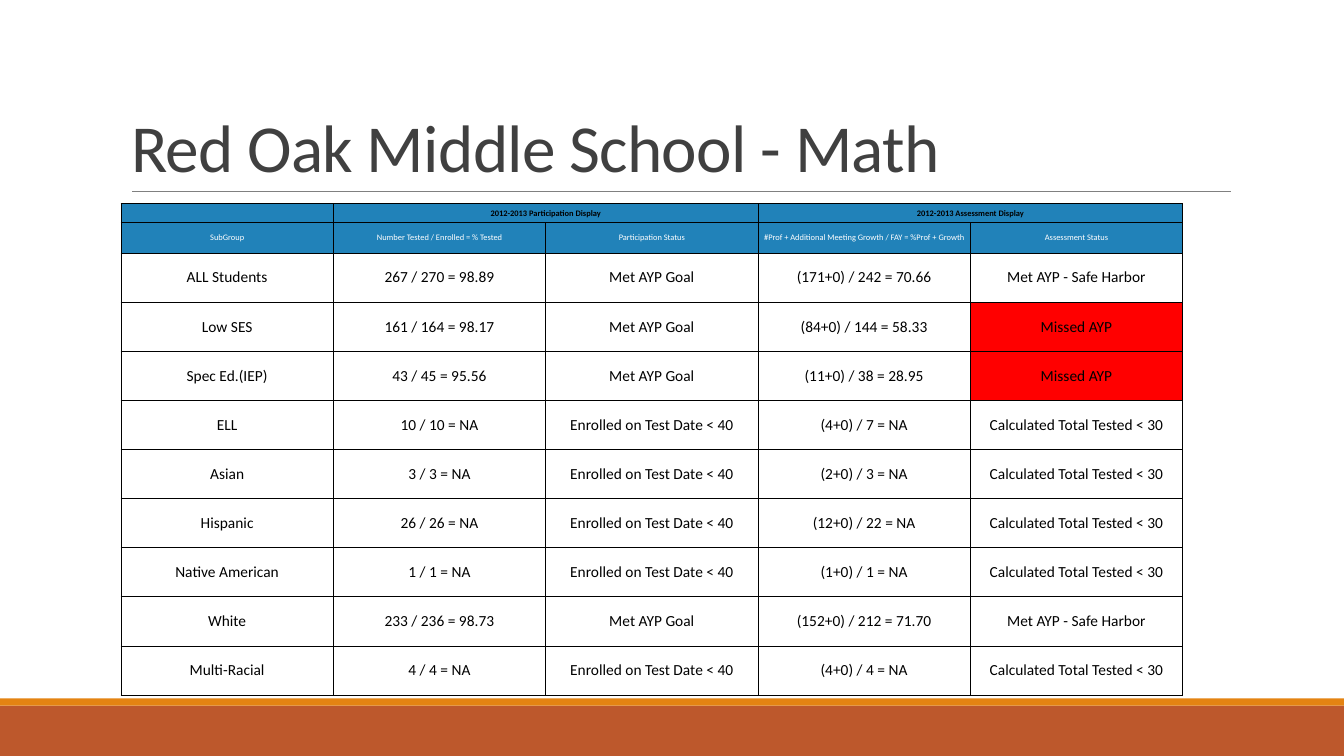
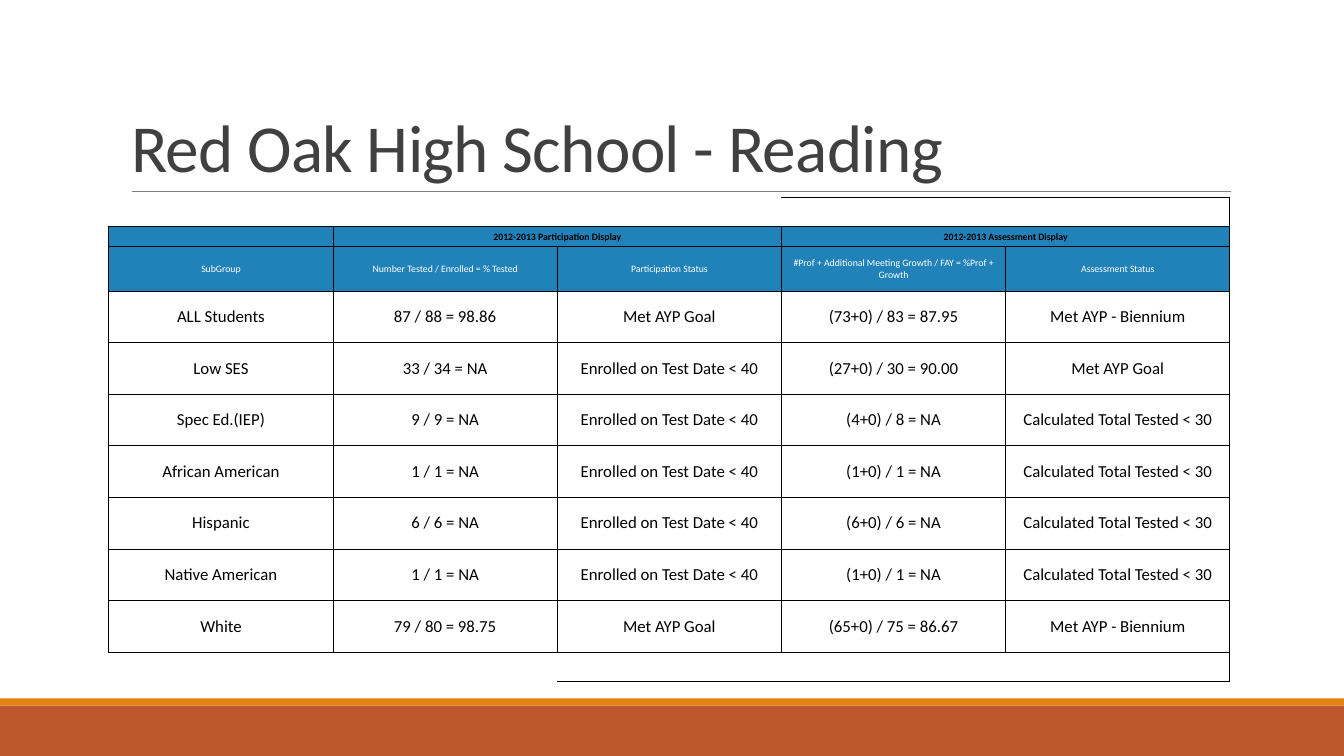
from dataclasses import dataclass

from lxml import etree
from pptx import Presentation
from pptx.dml.color import RGBColor
from pptx.enum.shapes import MSO_CONNECTOR, MSO_SHAPE
from pptx.enum.text import MSO_ANCHOR, MSO_AUTO_SIZE, PP_ALIGN
from pptx.oxml.ns import qn
from pptx.util import Inches, Pt

RECTANGLE = MSO_SHAPE.RECTANGLE
STRAIGHT = MSO_CONNECTOR.STRAIGHT
BOTTOM, MIDDLE = MSO_ANCHOR.BOTTOM, MSO_ANCHOR.MIDDLE
LEFT, CENTER = PP_ALIGN.LEFT, PP_ALIGN.CENTER
NO_AUTOFIT = MSO_AUTO_SIZE.NONE
TITLE_ONLY = 5
ALL_SIDES = "LRTB"


@dataclass(frozen=True)
class Theme:
    font: str = "Calibri"
    title: str = "404040"
    rule: str = "808080"
    band: str = "BD582C"
    stripe: str = "E48312"
    header: str = "2182B9"
    missed: str = "FF0000"
    white: str = "FFFFFF"
    black: str = "000000"
    title_size: float = 48
    title_spacing: float = -0.5
    title_leading: float = 0.85
    rule_width: float = 0.5
    border_width: float = 0.75


@dataclass(frozen=True)
class Box:
    left: float
    top: float
    width: float
    height: float

    def lengths(self):
        return [Inches(value) for value in (self.left, self.top, self.width, self.height)]


@dataclass(frozen=True)
class TableStyle:
    header_size: float
    body_size: float
    side_margin: float
    group_height: float
    label_height: float
    spare_height: float = 0


THEME = Theme()
PAGE = Box(0, 0, 13.33, 7.5)
TITLE_BOX = Box(1.2, 0.31, 11, 1.59)
BAND_HEIGHT, STRIPE_HEIGHT = 0.5, 0.07
RULE_LEFT, RULE_RIGHT, RULE_TOP = 1.31, 12.21, 1.9
VERTICAL_MARGIN = 0.03

GROUPS = ("", "2012-2013 Participation Display", "", "2012-2013 Assessment Display", "")
LABELS = (
    "SubGroup",
    "Number Tested / Enrolled = % Tested",
    "Participation Status",
    "#Prof + Additional Meeting Growth / FAY = %Prof + Growth",
    "Assessment Status",
)
COLUMN_COUNT = len(LABELS)
BLANK_ROW = ("",) * COLUMN_COUNT
TOP_SPARE_SIDES = ("B", "B", "B", "RTB", "RTB")
BOTTOM_SPARE_SIDES = ("T", "T", "RTB", "RTB", "RTB")

MET = "Met AYP Goal"
HARBOR = "Met AYP - Safe Harbor"
BIENNIUM = "Met AYP - Biennium"
MISSED = "Missed AYP"
FEW_ENROLLED = "Enrolled on Test Date < 40"
FEW_TESTED = "Calculated Total Tested < 30"

MATH_ROWS = (
    ("ALL Students", "267 / 270 = 98.89", MET, "(171+0) / 242 = 70.66", HARBOR),
    ("Low SES", "161 / 164 = 98.17", MET, "(84+0) / 144 = 58.33", MISSED),
    ("Spec Ed.(IEP)", "43 / 45 = 95.56", MET, "(11+0) / 38 = 28.95", MISSED),
    ("ELL", "10 / 10 = NA", FEW_ENROLLED, "(4+0) / 7 = NA", FEW_TESTED),
    ("Asian", "3 / 3 = NA", FEW_ENROLLED, "(2+0) / 3 = NA", FEW_TESTED),
    ("Hispanic", "26 / 26 = NA", FEW_ENROLLED, "(12+0) / 22 = NA", FEW_TESTED),
    ("Native American", "1 / 1 = NA", FEW_ENROLLED, "(1+0) / 1 = NA", FEW_TESTED),
    ("White", "233 / 236 = 98.73", MET, "(152+0) / 212 = 71.70", HARBOR),
    ("Multi-Racial", "4 / 4 = NA", FEW_ENROLLED, "(4+0) / 4 = NA", FEW_TESTED),
)
READING_ROWS = (
    ("ALL Students", "87 / 88 = 98.86", MET, "(73+0) / 83 = 87.95", BIENNIUM),
    ("Low SES", "33 / 34 = NA", FEW_ENROLLED, "(27+0) / 30 = 90.00", MET),
    ("Spec Ed.(IEP)", "9 / 9 = NA", FEW_ENROLLED, "(4+0) / 8 = NA", FEW_TESTED),
    ("African American", "1 / 1 = NA", FEW_ENROLLED, "(1+0) / 1 = NA", FEW_TESTED),
    ("Hispanic", "6 / 6 = NA", FEW_ENROLLED, "(6+0) / 6 = NA", FEW_TESTED),
    ("Native American", "1 / 1 = NA", FEW_ENROLLED, "(1+0) / 1 = NA", FEW_TESTED),
    ("White", "79 / 80 = 98.75", MET, "(65+0) / 75 = 86.67", BIENNIUM),
)
REPORTS = (
    (
        "Red Oak Middle School - Math",
        Box(1.2, 2.02, 10.53, 4.88),
        MATH_ROWS,
        TableStyle(6, 11, 0.06, 0.19, 0.3),
    ),
    (
        "Red Oak High School - Reading",
        Box(1.08, 1.96, 11.12, 4.8),
        READING_ROWS,
        TableStyle(7, 12, 0.07, 0.2, 0.44, 0.29),
    ),
)


def rgb(color):
    return RGBColor.from_string(color)


def assign(target, values):
    for name, value in values.items():
        setattr(target, name, value)


def format_span(span, size, color, bold=False):
    assign(span.font, {"name": THEME.font, "size": Pt(size), "bold": bold})
    span.font.color.rgb = rgb(color)


def add_bar(page, box, color):
    bar = page.shapes.add_shape(RECTANGLE, *box.lengths())
    bar.shadow.inherit = False
    bar.fill.solid()
    bar.fill.fore_color.rgb = rgb(color)
    bar.line.fill.background()
    return bar


def add_rule(page):
    ends = [Inches(value) for value in (RULE_LEFT, RULE_TOP, RULE_RIGHT, RULE_TOP)]
    rule = page.shapes.add_connector(STRAIGHT, *ends)
    rule.line.color.rgb = rgb(THEME.rule)
    rule.line.width = Pt(THEME.rule_width)
    etree.SubElement(rule.element.spPr, qn("a:effectLst"))
    return rule


def dress_layout(layout, page):
    band_top = PAGE.height - BAND_HEIGHT
    band = Box(0, band_top, PAGE.width, BAND_HEIGHT)
    stripe = Box(0, band_top - STRIPE_HEIGHT, PAGE.width, STRIPE_HEIGHT)
    decorations = (
        add_bar(page, band, THEME.band),
        add_bar(page, stripe, THEME.stripe),
        add_rule(page),
    )
    for decoration in decorations:
        layout.shapes.element.append(decoration.element)


def fill_title(page, box, text):
    title = page.shapes.title
    assign(title, dict(zip(("left", "top", "width", "height"), box.lengths())))
    frame = title.text_frame
    assign(frame, {"word_wrap": True, "auto_size": NO_AUTOFIT, "vertical_anchor": BOTTOM})
    para = frame.paragraphs[0]
    assign(para, {"alignment": LEFT, "line_spacing": THEME.title_leading})
    span = para.add_run()
    span.text = text
    format_span(span, THEME.title_size, THEME.title)
    span._r.get_or_add_rPr().set("spc", str(int(THEME.title_spacing * 100)))


def draw_borders(cell, sides):
    properties = cell._tc.get_or_add_tcPr()
    for side in ALL_SIDES:
        line = etree.SubElement(properties, qn(f"a:ln{side}"), w=str(Pt(THEME.border_width)))
        if side in sides:
            fill = etree.SubElement(line, qn("a:solidFill"))
            etree.SubElement(fill, qn("a:srgbClr"), val=THEME.black)
        else:
            etree.SubElement(line, qn("a:noFill"))


def fill_cell(cell, text, style, size, color=THEME.black, bold=False, fill=None, sides=ALL_SIDES):
    draw_borders(cell, sides)
    if fill:
        cell.fill.solid()
        cell.fill.fore_color.rgb = rgb(fill)
    else:
        cell.fill.background()
    assign(cell, {
        "margin_left": Inches(style.side_margin),
        "margin_right": Inches(style.side_margin),
        "margin_top": Inches(VERTICAL_MARGIN),
        "margin_bottom": Inches(VERTICAL_MARGIN),
        "vertical_anchor": MIDDLE,
    })
    para = cell.text_frame.paragraphs[0]
    para.alignment = CENTER
    if text:
        span = para.add_run()
        span.text = text
        format_span(span, size, color, bold)
    else:
        etree.SubElement(para._p, qn("a:endParaRPr"), sz=str(size * 100))


def plan_rows(rows, style, total_height):
    header = {"size": style.header_size, "fill": THEME.header}
    spare = {"size": style.body_size}
    fixed = style.group_height + style.label_height + 2 * style.spare_height
    body_height = (total_height - fixed) / len(rows)
    plan = [
        (style.group_height, GROUPS, [{**header, "bold": True}] * COLUMN_COUNT),
        (style.label_height, LABELS, [{**header, "color": THEME.white}] * COLUMN_COUNT),
    ]
    for row in rows:
        looks = [
            {"size": style.body_size, "fill": THEME.missed if text == MISSED else THEME.white}
            for text in row
        ]
        plan.append((body_height, row, looks))
    if style.spare_height:
        top, bottom = (
            (style.spare_height, BLANK_ROW, [{**spare, "sides": sides} for sides in edges])
            for edges in (TOP_SPARE_SIDES, BOTTOM_SPARE_SIDES)
        )
        plan = [top, *plan, bottom]
    return plan


def add_results_table(page, box, rows, style):
    plan = plan_rows(rows, style, box.height)
    table = page.shapes.add_table(len(plan), COLUMN_COUNT, *box.lengths()).table
    assign(table, {"first_row": False, "horz_banding": False})
    for column in table.columns:
        column.width = Inches(box.width / COLUMN_COUNT)
    for row_index, (height, texts, looks) in enumerate(plan):
        table.rows[row_index].height = Inches(height)
        for column_index, (text, look) in enumerate(zip(texts, looks)):
            fill_cell(table.cell(row_index, column_index), text, style, **look)
    group_row = 1 if style.spare_height else 0
    for first in (1, 3):
        table.cell(group_row, first).merge(table.cell(group_row, first + 1))
    if style.spare_height:
        table.cell(0, 0).merge(table.cell(0, 2))


def build_report(page, title, box, rows, style):
    fill_title(page, TITLE_BOX, title)
    add_results_table(page, box, rows, style)


def main():
    deck = Presentation()
    assign(deck, {"slide_width": Inches(PAGE.width), "slide_height": Inches(PAGE.height)})
    layout = deck.slide_layouts[TITLE_ONLY]
    pages = [deck.slides.add_slide(layout) for _ in REPORTS]
    dress_layout(layout, pages[0])
    for page, report in zip(pages, REPORTS):
        build_report(page, *report)
    deck.save("out.pptx")


if __name__ == "__main__":
    main()
